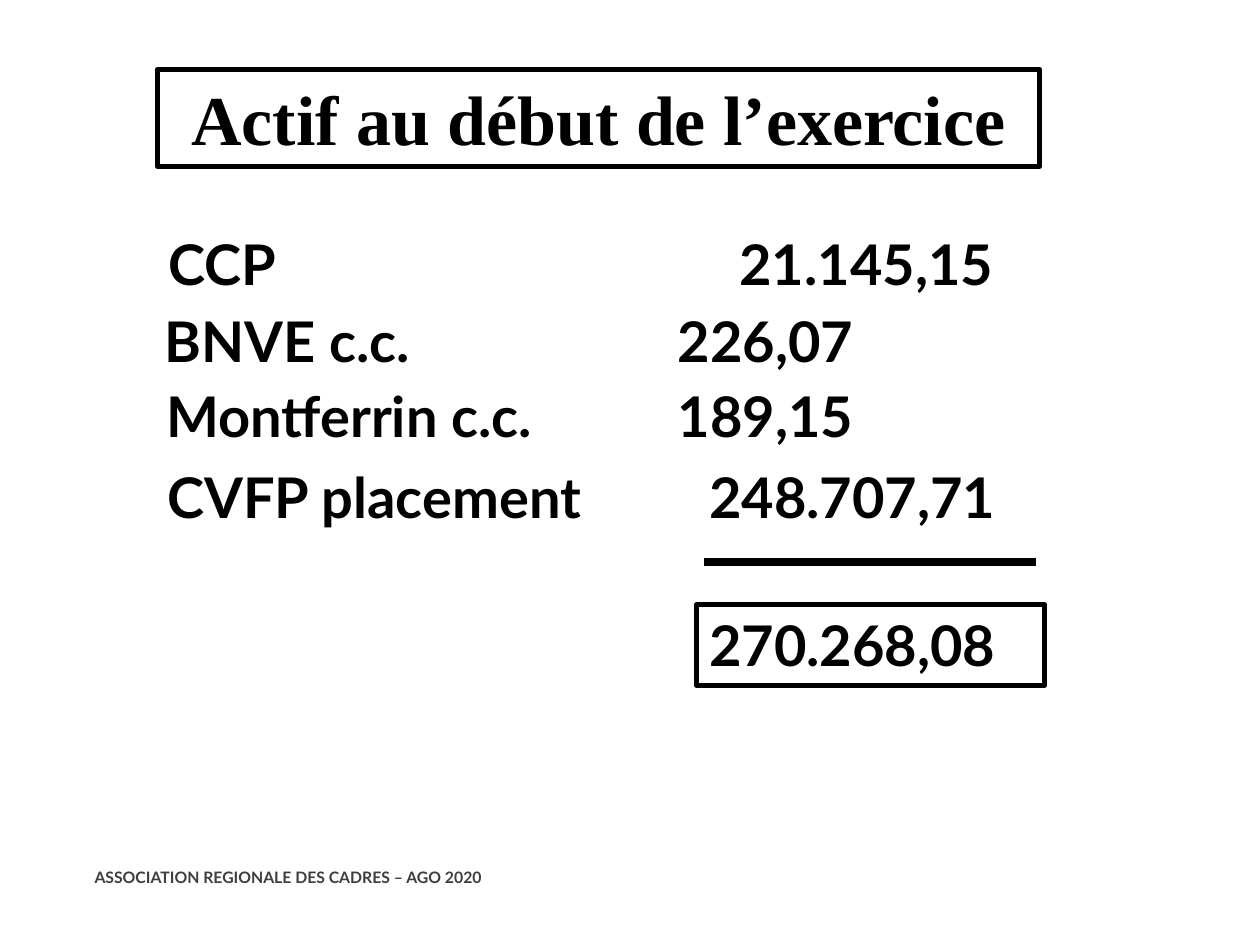
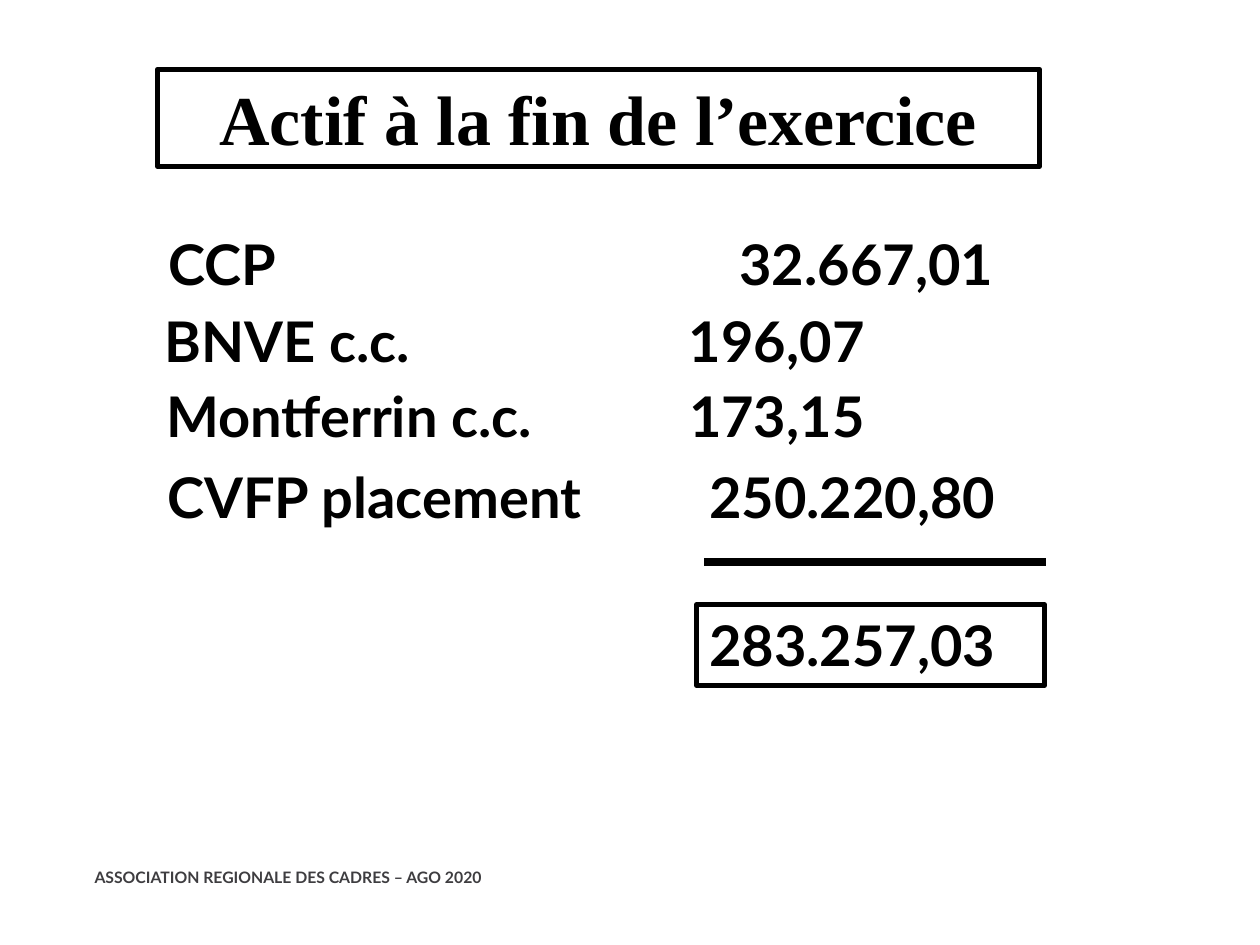
"""Builds two slides listing the assets at the start and the end of the year."""
from lxml import etree
from pptx import Presentation
from pptx.dml.color import RGBColor
from pptx.enum.shapes import MSO_CONNECTOR, MSO_SHAPE
from pptx.enum.text import MSO_ANCHOR, MSO_AUTO_SIZE, PP_ALIGN
from pptx.oxml.ns import qn
from pptx.util import Inches, Pt

RECT, STRAIGHT = MSO_SHAPE.RECTANGLE, MSO_CONNECTOR.STRAIGHT
TOP, GROW = MSO_ANCHOR.TOP, MSO_AUTO_SIZE.SHAPE_TO_FIT_TEXT
LEFT, CENTER = PP_ALIGN.LEFT, PP_ALIGN.CENTER

FOOTER = "ASSOCIATION REGIONALE DES CADRES – AGO 2020"
ACCOUNTS = ["CCP", "BNVE c.c.", "Montferrin c.c.", "CVFP placement"]
SLIDES = [
    {"title": "Actif au début de l’exercice",
     "amounts": ["21.145,15", "226,07", "189,15", "248.707,71"],
     "short_x": 5.38, "rule_end": 8.22, "total": "270.268,08"},
    {"title": "Actif à la fin de l’exercice",
     "amounts": ["32.667,01", "196,07", "173,15", "250.220,80"],
     "short_x": 5.47, "rule_end": 8.3, "total": "283.257,03"},
]

COLORS = {"ink": "000000", "footer": "3E3D40"}
BODY, SERIF = "Lato", "Times New Roman"
ROW_POS = [(1.24, 1.77), (1.21, 2.38), (1.22, 2.98), (1.23, 3.62)]
ROW_W, ROW_H, INSET = 7.19, 0.64, 0.1
CCP_X, PLACEMENT_X = 5.87, 5.63


def write(shape, text, size, font=BODY, color="ink", align=LEFT):
    tf = shape.text_frame
    tf.word_wrap = True
    tf.vertical_anchor = TOP
    tf.text = text
    p = tf.paragraphs[0]
    p.alignment = align
    f = p.runs[0].font
    f.name, f.size, f.bold = font, Pt(size), True
    f.color.rgb = RGBColor.from_string(COLORS[color])
    return tf


def add_text(s, box, text, size, **style):
    sp = s.shapes.add_textbox(*map(Inches, box))
    return write(sp, text, size, **style)


def add_frame(s, box, text, size, **style):
    sp = s.shapes.add_shape(RECT, *map(Inches, box))
    sp.shadow.inherit = False
    sp.fill.background()
    sp.line.color.rgb = RGBColor.from_string(COLORS["ink"])
    sp.line.width = Pt(3)
    write(sp, text, size, **style).auto_size = GROW


def add_row(s, pos, account, amount, amount_x):
    tf = add_text(s, (*pos, ROW_W, ROW_H), f"{account}\t{amount}", 32)
    tf.auto_size = GROW
    tabs = etree.SubElement(tf.paragraphs[0]._p.get_or_add_pPr(), qn("a:tabLst"))
    offset = Inches(amount_x - pos[0] - INSET)
    etree.SubElement(tabs, qn("a:tab"), pos=str(offset), algn="l")


def add_rule(s, x1, x2, y):
    line = s.shapes.add_connector(STRAIGHT, *map(Inches, (x1, y, x2, y)))
    line.line.color.rgb = RGBColor.from_string(COLORS["ink"])
    line.line.width = Pt(4.5)
    etree.SubElement(line._element.spPr, qn("a:effectLst"))


def add_footer(s):
    tf = add_text(s, (0.75, 6.89, 5.91, 0.39), FOOTER, 9, color="footer")
    tf.margin_left = tf.margin_top = tf.margin_right = tf.margin_bottom = 0


def build_slide(prs, data):
    s = prs.slides.add_slide(prs.slide_layouts[6])
    add_footer(s)
    add_frame(s, (1.25, 0.55, 7, 0.77), data["title"], 40, font=SERIF, align=CENTER)
    amount_xs = [CCP_X, data["short_x"], data["short_x"], PLACEMENT_X]
    for row in zip(ROW_POS, ACCOUNTS, data["amounts"], amount_xs):
        add_row(s, *row)
    add_rule(s, 5.59, data["rule_end"], 4.46)
    add_frame(s, (5.53, 4.8, 2.76, 0.64), data["total"], 32)


def main():
    prs = Presentation()
    prs.slide_width, prs.slide_height = Inches(10), Inches(7.5)
    for data in SLIDES:
        build_slide(prs, data)
    prs.save("out.pptx")


if __name__ == "__main__":
    main()
